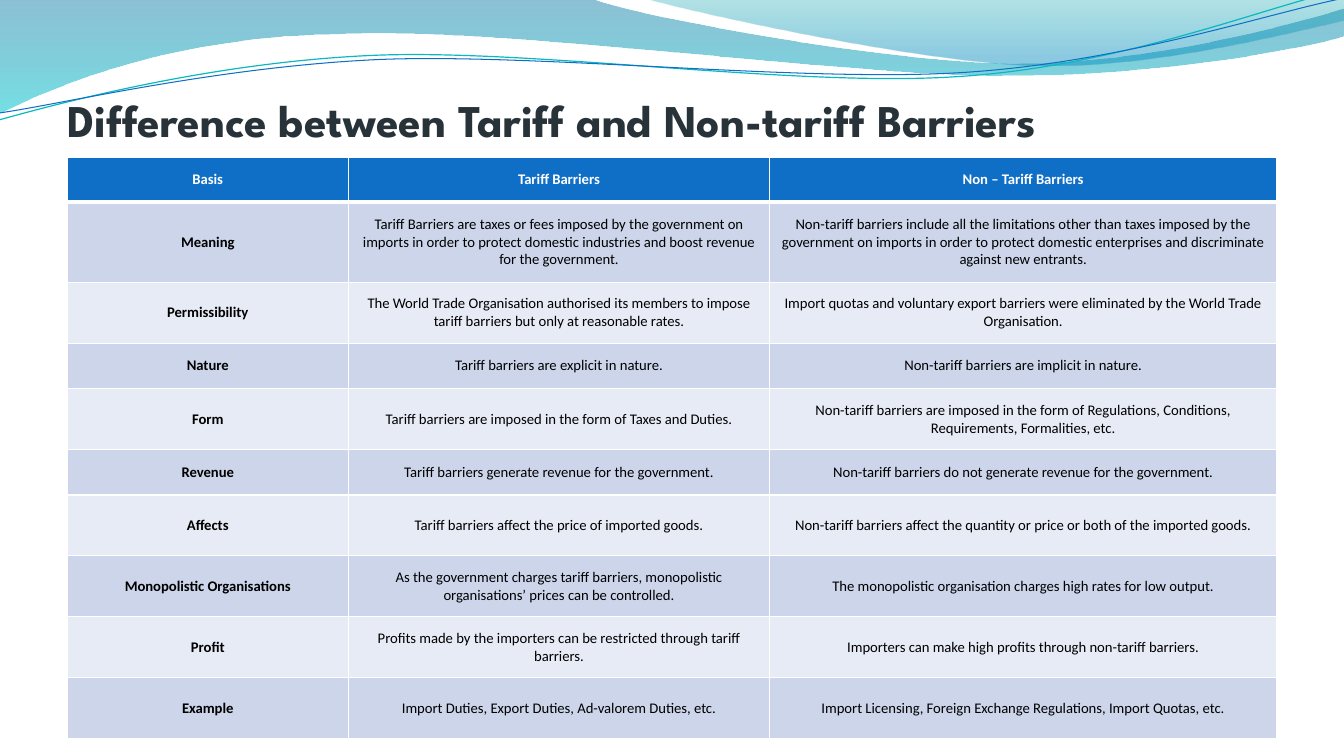
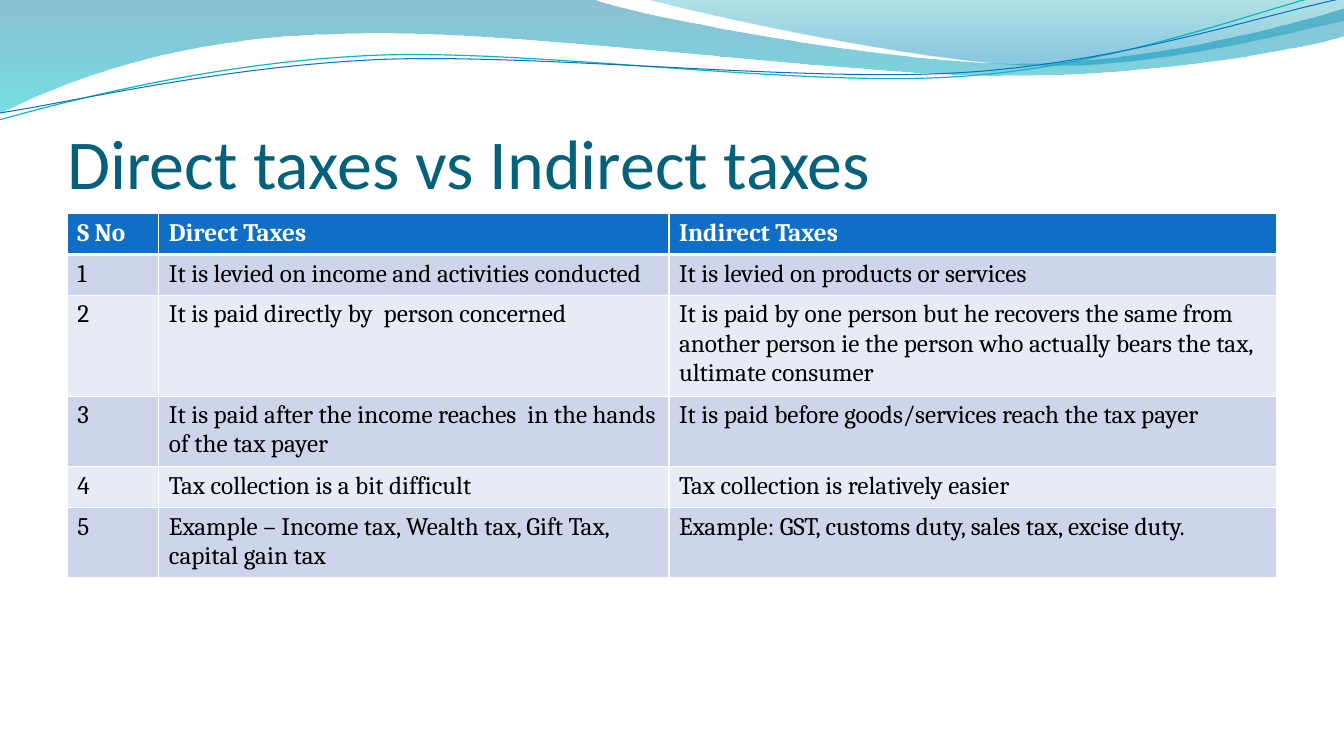
from dataclasses import dataclass
from math import cos, radians, sin
from typing import Optional

from lxml.etree import SubElement
from pptx import Presentation
from pptx.dml.color import RGBColor
from pptx.enum.text import MSO_ANCHOR as Anchor, PP_ALIGN as Align
from pptx.oxml.ns import qn
from pptx.util import Emu, Inches, Pt

# Page grid: 12 columns between the side margins, 50 rows from top to bottom
WIDTH, HEIGHT = Inches(13.333), Inches(7.5)
MARGIN = WIDTH * 0.05
COLUMN = WIDTH * 0.9 / 12
ROW = HEIGHT / 50

# Shared colours
WHITE, BLACK = "FFFFFF", "000000"
BLUE, TEAL = "0F6FC6", "0AB8BF"
BANDS = ("CCD5EA", "E7EBF5")

Point = tuple[float, float]


@dataclass(frozen=True)
class Stop:
    position: float
    colour: str
    opacity: int  # per cent


@dataclass(frozen=True)
class Wave:
    """An outline in inches: one point is a straight step, three are a Bézier step."""
    box: tuple[float, float, float, float]  # left, top, width, height
    start: Point
    steps: tuple[tuple[Point, ...], ...]
    stops: tuple[Stop, ...] = ()
    line: str = ""
    line_width: float = 0
    turn: float = 0  # degrees


@dataclass(frozen=True)
class Title:
    text: str
    bottom: float  # grid rows
    font: str
    size: float
    colour: str
    bold: bool = False


@dataclass(frozen=True)
class Grid:
    top: float  # grid rows
    columns: tuple[float, ...]  # grid columns
    rows: tuple[float, ...]  # grid rows
    font: str
    size: float
    cells: tuple[tuple[str, ...], ...]
    centred: bool = False
    bold_labels: bool = False
    padding: Optional[tuple[float, float]] = None  # inches, across and down


WAVES = (
    Wave((-0.01, -0.01, 13.36, 1.14), (0, 0), (
        ((5.87, -0.01),),
        ((6.34, 0.17), (8.85, 0.63), (10.11, 0.63)),
        ((11.38, 0.63), (12.78, 0.26), (13.33, 0.09)),
        ((13.35, 0.36),),
        ((13.11, 0.44), (11.6, 0.76), (9.94, 0.75)),
        ((8.29, 0.75), (5.09, 0.28), (3.43, 0.34)),
        ((1.72, 0.36), (0.61, 0.83), (-0.01, 1.13)),
        ((0, 0),),
    ), stops=(Stop(0, "0074A1", 45), Stop(1, "00C6CF", 55))),
    Wave((6.39, -0.01, 6.94, 0.7), (6.39, -0.01), (
        ((6.79, 0.11), (9.09, 0.62), (10.25, 0.65)),
        ((11.41, 0.69), (12.82, 0.32), (13.33, 0.21)),
        ((13.33, 0),),
        ((6.39, -0.01),),
    ), stops=(Stop(0, "00A1A9", 30), Stop(0.8, "008BBF", 45))),
    Wave((-0.03, 0.22, 13.36, 0.71), (-0.01, 1.19), (
        ((0.64, 1.01), (2.11, 0.62), (3.69, 0.55)),
        ((5.27, 0.48), (7.9, 0.87), (9.5, 0.76)),
        ((11.1, 0.66), (12.52, 0.08), (13.31, -0.1)),
    ), line=TEAL, line_width=0.85, turn=-2.7),
    Wave((-0.02, 0.3, 13.38, 0.58), (0, 1.12), (
        ((0.63, 1.03), (2.18, 0.66), (3.78, 0.59)),
        ((5.37, 0.53), (7.96, 0.82), (9.55, 0.72)),
        ((11.15, 0.62), (12.55, 0.14), (13.34, -0.02)),
    ), line=BLUE, line_width=0.75, turn=-2.7),
)

BARRIERS = Grid(
    top=10.4, columns=(2.79, 4.18, 5.03),
    rows=(2.95, 5.33, 4.03, 3, 4.03, 3, 4.03, 4.03, 4.03, 4.03),
    font="Calibri", size=10.5, centred=True, bold_labels=True, padding=(0.07, 0.07),
    cells=(
        ("Basis", "Tariff Barriers", "Non – Tariff Barriers"),
        ("Meaning",
         "Tariff Barriers are taxes or fees imposed by the government on imports in order "
         "to protect domestic industries and boost revenue for the government.",
         "Non-tariff barriers include all the limitations other than taxes imposed by the "
         "government on imports in order to protect domestic enterprises and discriminate "
         "against new entrants."),
        ("Permissibility",
         "The World Trade Organisation authorised its members to impose tariff barriers "
         "but only at reasonable rates.",
         "Import quotas and voluntary export barriers were eliminated by the World Trade "
         "Organisation."),
        ("Nature", "Tariff barriers are explicit in nature.",
         "Non-tariff barriers are implicit in nature."),
        ("Form", "Tariff barriers are imposed in the form of Taxes and Duties.",
         "Non-tariff barriers are imposed in the form of Regulations, Conditions, "
         "Requirements, Formalities, etc."),
        ("Revenue", "Tariff barriers generate revenue for the government.",
         "Non-tariff barriers do not generate revenue for the government."),
        ("Affects", "Tariff barriers affect the price of imported goods.",
         "Non-tariff barriers affect the quantity or price or both of the imported goods."),
        ("Monopolistic Organisations",
         "As the government charges tariff barriers, monopolistic organisations’ prices "
         "can be controlled.",
         "The monopolistic organisation charges high rates for low output."),
        ("Profit",
         "Profits made by the importers can be restricted through tariff barriers.",
         "Importers can make high profits through non-tariff barriers."),
        ("Example", "Import Duties, Export Duties, Ad-valorem Duties, etc.",
         "Import Licensing, Foreign Exchange Regulations, Import Quotas, etc."),
    ))

TAXES = Grid(
    top=14.13, columns=(0.91, 5.06, 6.03), rows=(2.7, 2.7, 6.5, 4.5, 2.7, 4.5),
    font="Cambria", size=18,
    cells=(
        ("S No", "Direct Taxes", "Indirect Taxes"),
        ("1", "It is levied on income and activities conducted",
         "It is levied on products or services"),
        ("2", "It is paid directly by  person concerned",
         "It is paid by one person but he recovers the same from another person ie the "
         "person who actually bears the tax, ultimate consumer"),
        ("3", "It is paid after the income reaches  in the hands of the tax payer",
         "It is paid before goods/services reach the tax payer"),
        ("4", "Tax collection is a bit difficult", "Tax collection is relatively easier"),
        ("5", "Example – Income tax, Wealth tax, Gift Tax, capital gain tax",
         "Example: GST, customs duty, sales tax, excise duty."),
    ))

SLIDES = (
    (Title("Difference between Tariff and Non-tariff Barriers", 9.67,
           "League Spartan", 32.4, "273239", bold=True), BARRIERS),
    (Title("Direct taxes vs Indirect taxes", 13.47, "Calibri", 50, "04617B"), TAXES),
)


def rgb(colour: str) -> RGBColor:
    return RGBColor.from_string(colour)


def set_font(paragraph, name: str, size: float, colour: str, bold: bool) -> None:
    font = paragraph.font
    font.name, font.size, font.bold = name, Pt(size), bold
    font.color.rgb = rgb(colour)


def local_point(wave: Wave, point: Point) -> tuple[int, int]:
    """Place a slide point inside the wave's box, before the box is turned."""
    left, top, width, height = wave.box
    x, y = point[0] - left - width / 2, point[1] - top - height / 2
    angle = radians(-wave.turn)
    return (Inches(width / 2 + x * cos(angle) - y * sin(angle)),
            Inches(height / 2 + x * sin(angle) + y * cos(angle)))


def add_outline(slide, wave: Wave):
    """Build the outline through its knots, then bend the Bézier steps."""
    builder = slide.shapes.build_freeform(*local_point(wave, wave.start), scale=1.0)
    builder.add_line_segments(
        [local_point(wave, step[-1]) for step in wave.steps], close=bool(wave.stops))
    shape = builder.convert_to_shape()
    shape.left, shape.top, shape.width, shape.height = map(Inches, wave.box)
    shape.rotation = wave.turn

    outline = next(shape.element.iter(qn("a:path")))
    outline.set("w", str(shape.width))
    outline.set("h", str(shape.height))
    move, *segments = list(outline)
    for command, step in zip([move, *segments], ((wave.start,), *wave.steps)):
        if len(step) == 3:
            curve = SubElement(outline, qn("a:cubicBezTo"))
            outline.replace(command, curve)
            command = curve
        for old in list(command):
            command.remove(old)
        for point in step:
            x, y = local_point(wave, point)
            SubElement(command, qn("a:pt"), x=str(x), y=str(y))
    return shape


def draw_wave(slide, wave: Wave) -> None:
    shape = add_outline(slide, wave)
    shape.shadow.inherit = False
    if not wave.stops:
        shape.fill.background()
        shape.line.color.rgb = rgb(wave.line)
        shape.line.width = Pt(wave.line_width)
        return
    shape.line.fill.background()
    shape.fill.gradient()
    shape.fill.gradient_angle = 270  # top to bottom
    for gradient_stop, stop in zip(shape.fill.gradient_stops, wave.stops):
        gradient_stop.position = stop.position
        gradient_stop.color.rgb = rgb(stop.colour)
    for colour, stop in zip(shape.element.iter(qn("a:srgbClr")), wave.stops):
        SubElement(colour, qn("a:alpha"), val=str(stop.opacity * 1000))


def draw_title(slide, title: Title) -> None:
    top = 5.13 * ROW
    box = slide.shapes.add_textbox(
        Emu(int(MARGIN)), Emu(int(top)), Emu(int(12 * COLUMN)),
        Emu(int(title.bottom * ROW - top)))
    frame = box.text_frame
    frame.word_wrap = True
    frame.vertical_anchor = Anchor.BOTTOM
    frame.margin_left = frame.margin_right = frame.margin_bottom = 0
    paragraph = frame.paragraphs[0]
    paragraph.text = title.text
    set_font(paragraph, title.font, title.size, title.colour, title.bold)


def set_borders(cell, top: float, bottom: float) -> None:
    """White rules on all four sides; widths in points."""
    properties = cell._tc.get_or_add_tcPr()
    for side, width in (("L", 1), ("R", 1), ("T", top), ("B", bottom)):
        line = SubElement(properties, qn(f"a:ln{side}"), w=str(Pt(width)))
        fill = SubElement(line, qn("a:solidFill"))
        SubElement(fill, qn("a:srgbClr"), val=WHITE)


def draw_table(slide, grid: Grid) -> None:
    table = slide.shapes.add_table(
        len(grid.rows), len(grid.columns), Emu(int(MARGIN)), Emu(int(grid.top * ROW)),
        Emu(int(sum(grid.columns) * COLUMN)), Emu(int(sum(grid.rows) * ROW))).table
    table.horz_banding = False
    for column, width in zip(table.columns, grid.columns):
        column.width = Emu(int(width * COLUMN))
    for row, height in zip(table.rows, grid.rows):
        row.height = Emu(int(height * ROW))

    for row_index, texts in enumerate(grid.cells):
        header = row_index == 0
        for column_index, text in enumerate(texts):
            cell = table.cell(row_index, column_index)
            set_borders(cell, top=3 if row_index == 1 else 1, bottom=3 if header else 1)
            cell.fill.solid()
            cell.fill.fore_color.rgb = rgb(BLUE if header else BANDS[(row_index - 1) % 2])
            if grid.padding:
                across, down = map(Inches, grid.padding)
                cell.margin_left = cell.margin_right = across
                cell.margin_top = cell.margin_bottom = down
            cell.vertical_anchor = Anchor.MIDDLE if grid.centred else Anchor.TOP
            paragraph = cell.text_frame.paragraphs[0]
            paragraph.text = text
            paragraph.alignment = Align.CENTER if grid.centred else Align.LEFT
            bold = header or (grid.bold_labels and column_index == 0)
            set_font(paragraph, grid.font, grid.size, WHITE if header else BLACK, bold)


def main() -> None:
    presentation = Presentation()
    presentation.slide_width, presentation.slide_height = WIDTH, HEIGHT
    blank = presentation.slide_layouts[6]
    for title, grid in SLIDES:
        slide = presentation.slides.add_slide(blank)
        for wave in WAVES:
            draw_wave(slide, wave)
        draw_title(slide, title)
        draw_table(slide, grid)
    presentation.save("out.pptx")


if __name__ == "__main__":
    main()
